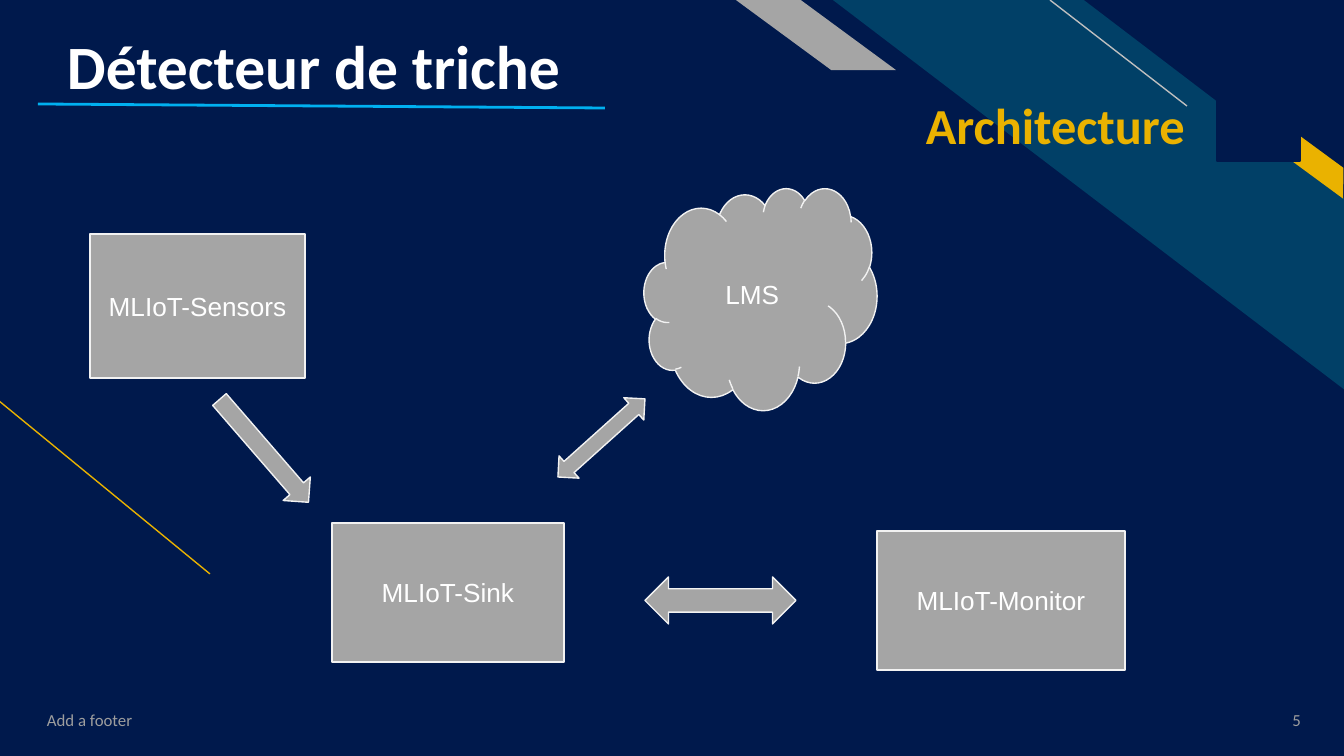
from pptx import Presentation
from pptx.util import Pt
from pptx.dml.color import RGBColor
from pptx.enum.shapes import MSO_SHAPE as S, MSO_CONNECTOR
from pptx.enum.text import PP_ALIGN as A, MSO_ANCHOR as V, MSO_AUTO_SIZE
from pptx.oxml.ns import qn
from lxml.etree import SubElement

NAVY, TEAL, GOLD, GREY = "00194C", "014067", "EAB200", "A5A5A5"
WHITE, PALE, MUTED = "FFFFFF", "F2F2F2", "9E9E9E"

# Content: places are (left, top, width, height) in px
TITLE = ("Détecteur de triche", (58, -23, 918, 126))
TOPIC = ("Architecture", (917, 74, 306, 86))
FOOT = [("Add a footer", (38, 700, 454, 40), A.LEFT),
        ("5", (1228, 700, 82, 40), A.RIGHT)]
# kind, place, fill, adjustment, turn
DECOR = [(S.DIAGONAL_STRIPE, (833, 0, 512, 390), TEAL, 0.51, 0),
         (S.PARALLELOGRAM, (1216, 132, 149, 25), GOLD, 0.72, 36.3),
         (S.PARALLELOGRAM, (736, 0, 160, 70), GREY, 1.36, 0)]
# from, to, colour, width in points
LINES = [((210, 574), (-1, 401), GOLD, 0.75),
         ((1187, 106), (1050, 0), "BFBFBF", 0.75)]
RULE = ((38, 104), (605, 108), "00B0F0", 1.5)
MASK = (1217, 9, 83, 152)
NODES = [("MLIoT-Sensors", S.RECTANGLE, (90, 234, 215, 144)),
         ("MLIoT-Sink", S.RECTANGLE, (332, 523, 232, 139)),
         ("MLIoT-Monitor", S.RECTANGLE, (877, 531, 248, 139)),
         ("LMS", S.CLOUD, (644, 188, 233, 222))]
ARROWS = [(S.RIGHT_ARROW, (196, 433, 136, 36), 49.1),
          (S.LEFT_RIGHT_ARROW, (645, 577, 151, 47), 0),
          (S.LEFT_RIGHT_ARROW, (543, 423, 117, 30), 318.1)]

PX = 914400 / 134.4


def emu(vals):
    return [round(v * PX) for v in vals]


def rgb(code):
    return RGBColor.from_string(code)


def write(shape, text, font, size, color, align, anchor, pads, bold=False):
    frame = shape.text_frame
    frame.text = text
    frame.word_wrap = True
    frame.auto_size = MSO_AUTO_SIZE.NONE
    frame.vertical_anchor = anchor
    (frame.margin_left, frame.margin_top,
     frame.margin_right, frame.margin_bottom) = emu(pads)
    para = frame.paragraphs[0]
    para.alignment = align
    para.space_before = Pt(0)
    para.font.name, para.font.size, para.font.bold = font, Pt(size), bold
    para.font.color.rgb = rgb(color)
    return para


def draw(kind, place, fill, line=None, width=0.75, turn=0):
    shape = slide.shapes.add_shape(kind, *emu(place))
    shape.shadow.inherit = False
    shape.fill.solid()
    shape.fill.fore_color.rgb = rgb(fill)
    if line:
        shape.line.color.rgb = rgb(line)
        shape.line.width = Pt(width)
    else:
        shape.line.fill.background()
    shape.rotation = turn
    return shape


def link(start, end, color, width):
    line = slide.shapes.add_connector(
        MSO_CONNECTOR.STRAIGHT, *emu(start + end))
    line.line.color.rgb = rgb(color)
    line.line.width = Pt(width)
    SubElement(line._element.spPr, qn("a:effectLst"))


def place_holder(shape, place):
    shape.left, shape.top, shape.width, shape.height = emu(place)
    slide.shapes._spTree.append(shape._element)  # bring to front


deck = Presentation()
deck.slide_width, deck.slide_height = emu((1344, 756))
slide = deck.slides.add_slide(deck.slide_layouts[4])
for holder in list(slide.placeholders):
    if holder.placeholder_format.idx > 1:
        holder._element.getparent().remove(holder._element)

# Backdrop
slide.background.fill.solid()
slide.background.fill.fore_color.rgb = rgb(NAVY)
for kind, place, fill, adj, turn in DECOR:
    shape = draw(kind, place, fill, turn=turn)
    shape.adjustments[0] = adj
    shape._element.spPr.find(qn("a:xfrm")).set("flipH", "1")
for line in LINES:
    link(*line)

# Title and topic
pads = (9, 5, 9, 5)
title, topic = slide.shapes.title, slide.placeholders[1]
place_holder(title, TITLE[1])
para = write(title, TITLE[0], "Calibri", 33, WHITE, A.LEFT, V.BOTTOM,
             (9, 5, 9, 0), True)
para.line_spacing = 0.9
place_holder(topic, TOPIC[1])
write(topic, TOPIC[0], "Calibri", 27, GOLD, A.LEFT, V.BOTTOM, pads, True)

# Footer and page number
for text, place, align in FOOT:
    box = slide.shapes.add_textbox(*emu(place))
    write(box, text, "Calibri", 9, MUTED, align, V.MIDDLE, pads)

# Title rule and corner mask
link(*RULE)
draw(S.RECTANGLE, MASK, NAVY, NAVY, 1)

# Diagram
for text, kind, place in NODES:
    node = draw(kind, place, GREY, PALE)
    write(node, text, "Arial", 14, WHITE, A.CENTER, V.MIDDLE, (13,) * 4)
for kind, place, turn in ARROWS:
    draw(kind, place, GREY, PALE, turn=turn)

deck.save("out.pptx")
